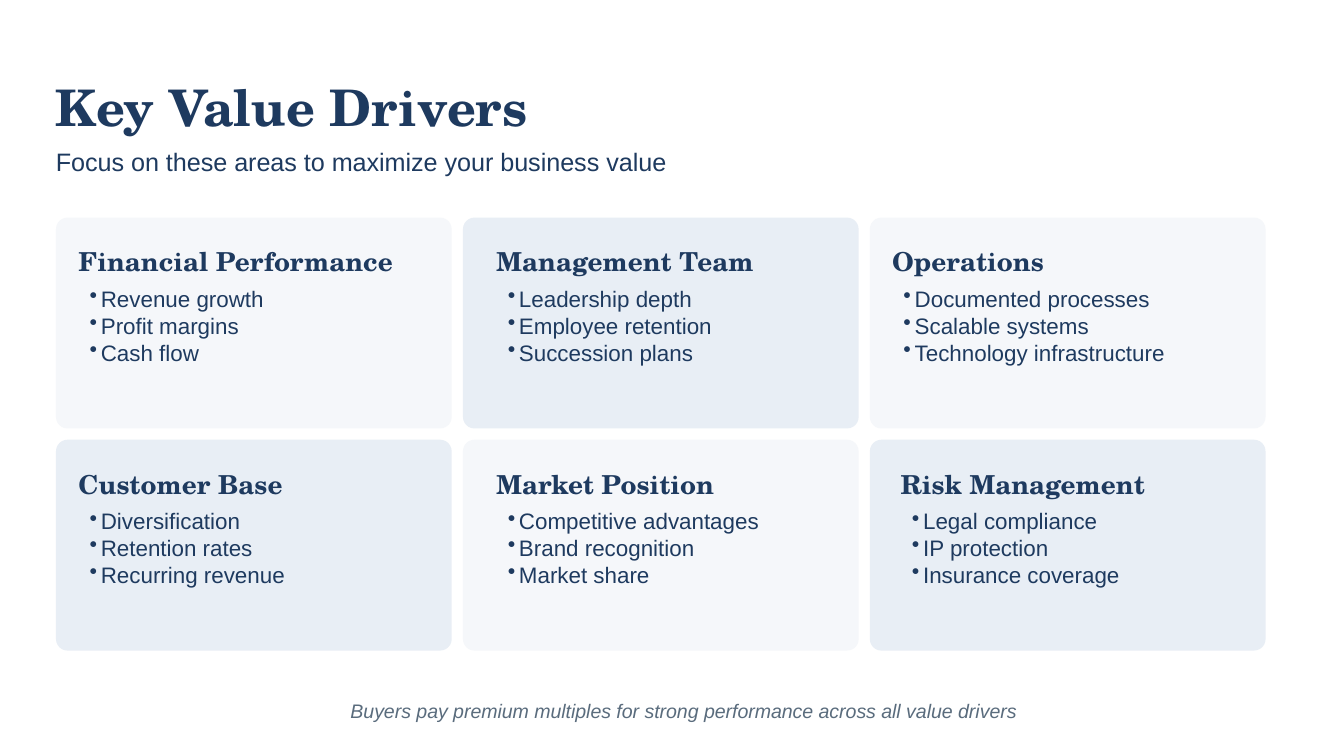
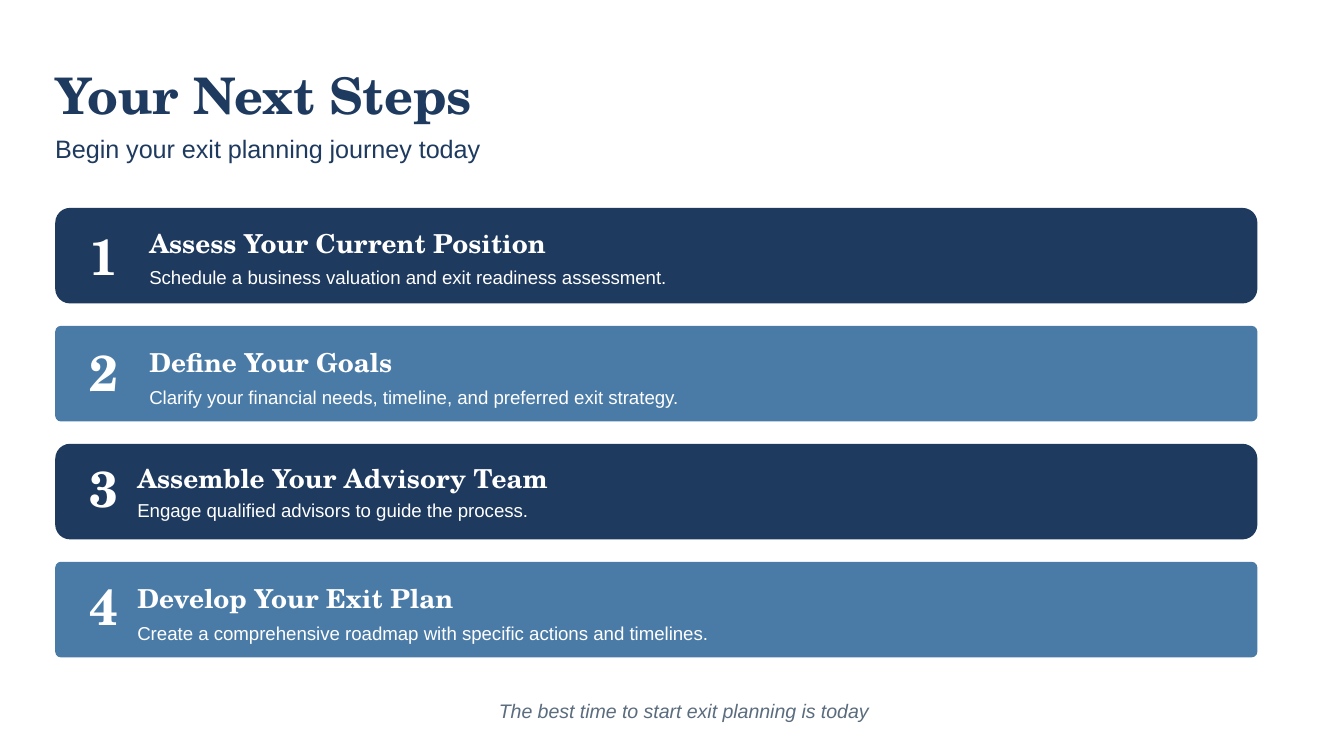
from dataclasses import dataclass

from lxml import etree
from pptx import Presentation
from pptx.dml.color import RGBColor
from pptx.enum import shapes, text
from pptx.oxml import ns
from pptx.util import Pt

COLORS = {
    "background": "FFFFFF",
    "navy": "1E3A5F",
    "steel": "4A7BA7",
    "pale": "F5F7FA",
    "mist": "E8EEF5",
    "slate": "5A6C7D",
    "white": "FFFFFF",
}
SERIF, SANS = "TeX Gyre Schola", "Arial"


@dataclass
class Style:
    font: str
    size: float
    color: str = "navy"
    bold: bool = False
    italic: bool = False
    spacing: float = 0  # exact line height, 0 for single
    after: float = 0
    align: text.PP_ALIGN = text.PP_ALIGN.LEFT


TITLE = Style(SERIF, 27, bold=True, spacing=30, after=6)
SUBTITLE = Style(SANS, 13.5, spacing=21, after=9)
FOOTER = Style(SANS, 10.5, "slate", italic=True, spacing=14,
               align=text.PP_ALIGN.CENTER)
CARD_HEADING = Style(SERIF, 14, bold=True, spacing=13.5, after=4.5)
CARD_ITEM = Style(SANS, 12)
STEP_NUMBER = Style(SERIF, 27, "white", bold=True, spacing=30, after=6,
                    align=text.PP_ALIGN.RIGHT)
STEP_HEADING = Style(SERIF, 14, "white", bold=True, spacing=14.4, after=3)
STEP_DETAIL = Style(SANS, 10, "white", spacing=13.7)

# Heading, items, left padding of the text
DRIVERS = [
    ("Financial Performance",
     ["Revenue growth", "Profit margins", "Cash flow"], 12),
    ("Management Team",
     ["Leadership depth", "Employee retention", "Succession plans"], 18),
    ("Operations",
     ["Documented processes", "Scalable systems",
      "Technology infrastructure"], 12),
    ("Customer Base",
     ["Diversification", "Retention rates", "Recurring revenue"], 12),
    ("Market Position",
     ["Competitive advantages", "Brand recognition", "Market share"], 18),
    ("Risk Management",
     ["Legal compliance", "IP protection", "Insurance coverage"], 16.5),
]

# Heading, detail, left padding, then drops of number, heading and detail
STEPS = [
    ("Assess Your Current Position",
     "Schedule a business valuation and exit readiness assessment.",
     50.4, (11.6, 13, 29.6)),
    ("Define Your Goals",
     "Clarify your financial needs, timeline, and preferred exit strategy.",
     50.4, (10.8, 13.6, 30.2)),
    ("Assemble Your Advisory Team",
     "Engage qualified advisors to guide the process.",
     44, (9.6, 12.4, 27.6)),
    ("Develop Your Exit Plan",
     "Create a comprehensive roadmap with specific actions and timelines.",
     44, (9.6, 13.2, 30.4)),
]


def rgb(name):
    return RGBColor.from_string(COLORS[name])


def add_bullet(paragraph, indent):
    props = paragraph._p.get_or_add_pPr()
    props.set("marL", str(Pt(indent)))
    props.set("indent", str(-Pt(indent)))
    etree.SubElement(props, ns.qn("a:buChar")).set("char", "•")


def add_text(slide, box, lines, style, bullet_indent=0):
    area = slide.shapes.add_textbox(*map(Pt, box))
    frame = area.text_frame
    frame.word_wrap = True
    frame.margin_left = Pt(bullet_indent)
    frame.margin_top = frame.margin_right = frame.margin_bottom = 0
    frame.text = "\n".join(lines)
    for paragraph in frame.paragraphs:
        if bullet_indent:
            add_bullet(paragraph, bullet_indent)
        paragraph.alignment = style.align
        if style.spacing:
            paragraph.line_spacing = Pt(style.spacing)
        if style.after:
            paragraph.space_after = Pt(style.after)
        for run in paragraph.runs:
            run.font.name = style.font
            run.font.size = Pt(style.size)
            run.font.bold = style.bold
            run.font.italic = style.italic
            run.font.color.rgb = rgb(style.color)


def add_panel(slide, box, fill, rounding):
    panel = slide.shapes.add_shape(
        shapes.MSO_SHAPE.ROUNDED_RECTANGLE, *map(Pt, box))
    panel.adjustments[0] = rounding
    panel.fill.solid()
    panel.fill.fore_color.rgb = rgb(fill)
    panel.line.fill.background()
    panel.shadow.inherit = False


def add_frame(deck, left, top, title, subtitle, footer):
    """Add a slide with its title, subtitle and closing line."""
    slide = deck.slides.add_slide(deck.slide_layouts[6])
    slide.background.fill.solid()
    slide.background.fill.fore_color.rgb = rgb("background")
    add_text(slide, (left, top, 338, 30), [title], TITLE)
    add_text(slide, (left, top + 30, 673, 21), [subtitle], SUBTITLE)
    add_text(slide, (30, 373, 673, 14), [footer], FOOTER)
    return slide


def add_driver_card(slide, box, fill, heading, items, padding):
    left, top, width, _ = box
    add_panel(slide, box, fill, 0.055)
    add_text(slide, (left + padding, top + 18.4, 216, 13.5),
             [heading], CARD_HEADING)
    add_text(slide, (left + padding, top + 36.2, width, 69),
             items, CARD_ITEM, bullet_indent=6)


def add_step_bar(slide, box, number, heading, detail, padding, drops):
    left, top, _, _ = box
    fill, rounding = ("navy", 0.155) if number % 2 else ("steel", 0.059)
    add_panel(slide, box, fill, rounding)
    number_drop, heading_drop, detail_drop = drops
    add_text(slide, (left, top + number_drop, 34, 21),
             [str(number)], STEP_NUMBER)
    add_text(slide, (left + padding, top + heading_drop, 390, 5),
             [heading], STEP_HEADING)
    add_text(slide, (left + padding, top + detail_drop, 390, 5),
             [detail], STEP_DETAIL)


def build_drivers(deck):
    slide = add_frame(
        deck, 30, 43.4, "Key Value Drivers",
        "Focus on these areas to maximize your business value",
        "Buyers pay premium multiples for strong performance "
        "across all value drivers")
    # Three-column grid with alternating fills
    width, height, gap = 212, 113, 6
    for index, driver in enumerate(DRIVERS):
        row, column = divmod(index, 3)
        box = (30 + column * (width + gap),
               116.6 + row * (height + gap), width, height)
        add_driver_card(slide, box, ("pale", "mist")[index % 2], *driver)


def build_steps(deck):
    slide = add_frame(
        deck, 29.6, 36.8, "Your Next Steps",
        "Begin your exit planning journey today",
        "The best time to start exit planning is today")
    # Evenly stacked bars
    height, gap = 51.2, 12
    for index, step in enumerate(STEPS):
        box = (29.6, 111.4 + index * (height + gap), 644, height)
        add_step_bar(slide, box, index + 1, *step)


def main():
    deck = Presentation()
    deck.slide_width, deck.slide_height = Pt(720), Pt(405)
    build_drivers(deck)
    build_steps(deck)
    deck.save("out.pptx")


if __name__ == "__main__":
    main()
